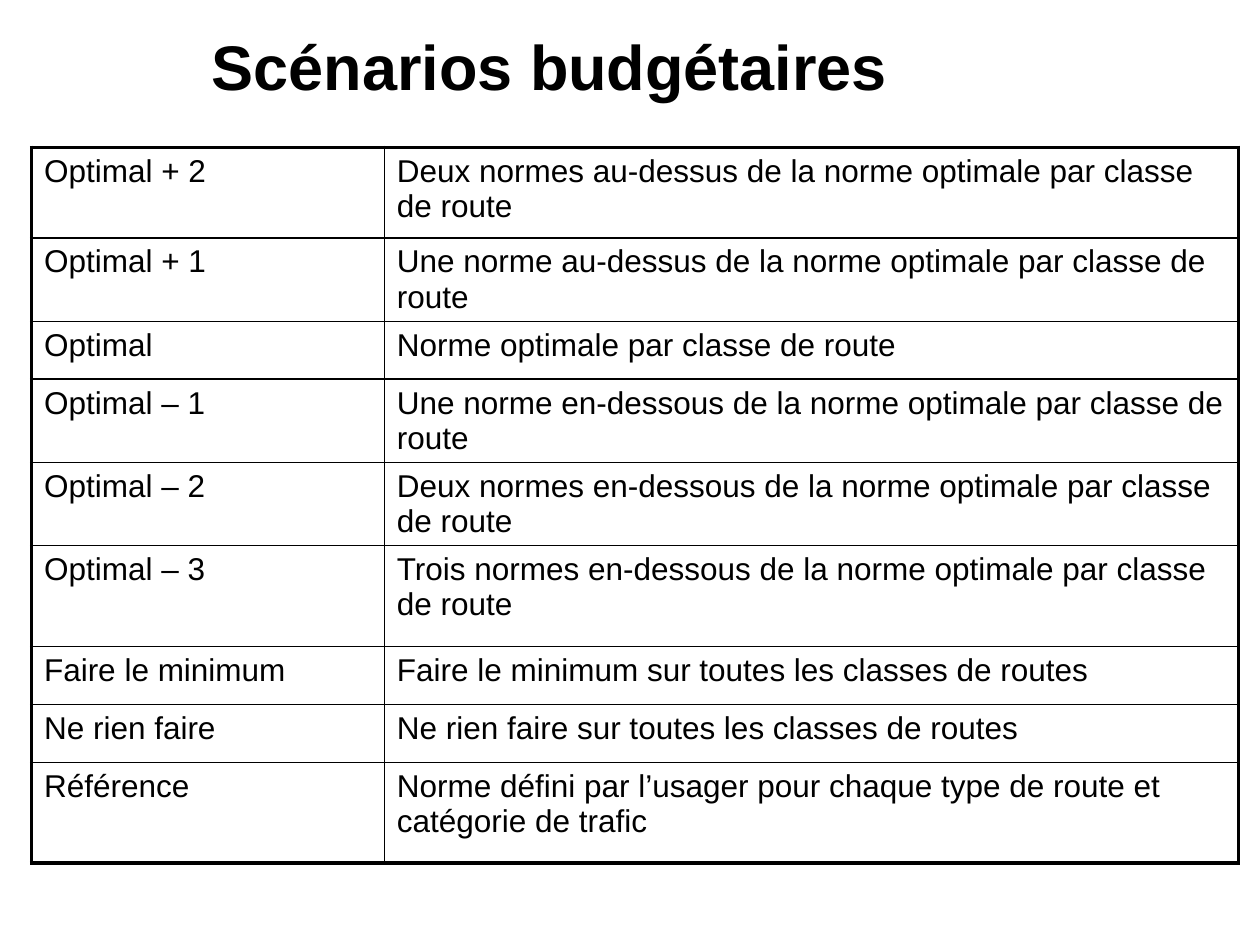
from dataclasses import dataclass

from lxml.etree import SubElement
from pptx import Presentation
from pptx.dml.color import RGBColor
from pptx.enum.text import MSO_ANCHOR, PP_ALIGN
from pptx.oxml.ns import qn
from pptx.util import Inches, Pt


@dataclass(frozen=True)
class Theme:
    font: str = "Arial"
    ink: str = "000000"
    title_size: int = 36
    body_size: int = 18
    frame_width: float = 2.25
    rule_width: float = 1


SCENARIOS = [
    ("Optimal + 2", "Deux normes au-dessus de la norme optimale par classe de route", 0.72),
    ("Optimal + 1", "Une norme au-dessus de la norme optimale par classe de route", 0.63),
    ("Optimal", "Norme optimale par classe de route", 0.46),
    ("Optimal – 1", "Une norme en-dessous de la norme optimale par classe de route", 0.63),
    ("Optimal – 2", "Deux normes en-dessous de la norme optimale par classe de route", 0.63),
    ("Optimal – 3", "Trois normes en-dessous de la norme optimale par classe de route", 0.8),
    ("Faire le minimum", "Faire le minimum sur toutes les classes de routes", 0.46),
    ("Ne rien faire", "Ne rien faire sur toutes les classes de routes", 0.46),
    ("Référence", "Norme défini par l’usager pour chaque type de route et catégorie de trafic", 0.8),
]


class SlideBuilder:
    def __init__(self, slide, theme):
        self.slide = slide
        self.theme = theme

    def set_text(self, frame, text, size, bold=False):
        frame.text = text
        paragraph = frame.paragraphs[0]
        paragraph.alignment = PP_ALIGN.LEFT
        font = paragraph.runs[0].font
        formats = {"name": self.theme.font, "size": Pt(size), "bold": bold}
        for attribute, value in formats.items():
            setattr(font, attribute, value)
        font.color.rgb = RGBColor.from_string(self.theme.ink)

    def title(self, text, left, top, width, height):
        heading = self.slide.shapes.title
        box = {"left": left, "top": top, "width": width, "height": height}
        for attribute, value in box.items():
            setattr(heading, attribute, Inches(value))
        heading.text_frame.vertical_anchor = MSO_ANCHOR.MIDDLE
        self.set_text(heading.text_frame, text, self.theme.title_size, bold=True)

    def border(self, cell, outer_sides):
        """Rule every side of the cell, thicker on the table's outer sides."""
        properties = cell._tc.get_or_add_tcPr()
        for side in "LRTB":
            points = self.theme.frame_width if side in outer_sides else self.theme.rule_width
            line = SubElement(properties, qn(f"a:ln{side}"), w=str(Pt(points)))
            SubElement(SubElement(line, qn("a:solidFill")), qn("a:srgbClr"), val=self.theme.ink)

    def table(self, rows, heights, widths, left, top):
        grid = self.slide.shapes.add_table(
            len(rows), len(widths), Inches(left), Inches(top),
            Inches(sum(widths)), Inches(sum(heights)),
        ).table
        grid.first_row = grid.horz_banding = False
        for column, width in zip(grid.columns, widths):
            column.width = Inches(width)
        for row, height in zip(grid.rows, heights):
            row.height = Inches(height)
        for r, texts in enumerate(rows):
            for c, text in enumerate(texts):
                cell = grid.cell(r, c)
                edges = {"L": c == 0, "R": c == len(widths) - 1,
                         "T": r == 0, "B": r == len(rows) - 1}
                self.border(cell, [side for side, outer in edges.items() if outer])
                cell.fill.background()
                self.set_text(cell.text_frame, text, self.theme.body_size)


def main():
    deck = Presentation()
    deck.slide_width, deck.slide_height = Inches(10), Inches(7.5)
    title_only = deck.slide_layouts[5]
    builder = SlideBuilder(deck.slides.add_slide(title_only), Theme())
    builder.title("Scénarios budgétaires", 1.58, 0.07, 8.01, 0.9)
    builder.table(
        rows=[(name, meaning) for name, meaning, _ in SCENARIOS],
        heights=[height for _, _, height in SCENARIOS],
        widths=[2.8, 6.78], left=0.25, top=1.17,
    )
    deck.save("out.pptx")


if __name__ == "__main__":
    main()
